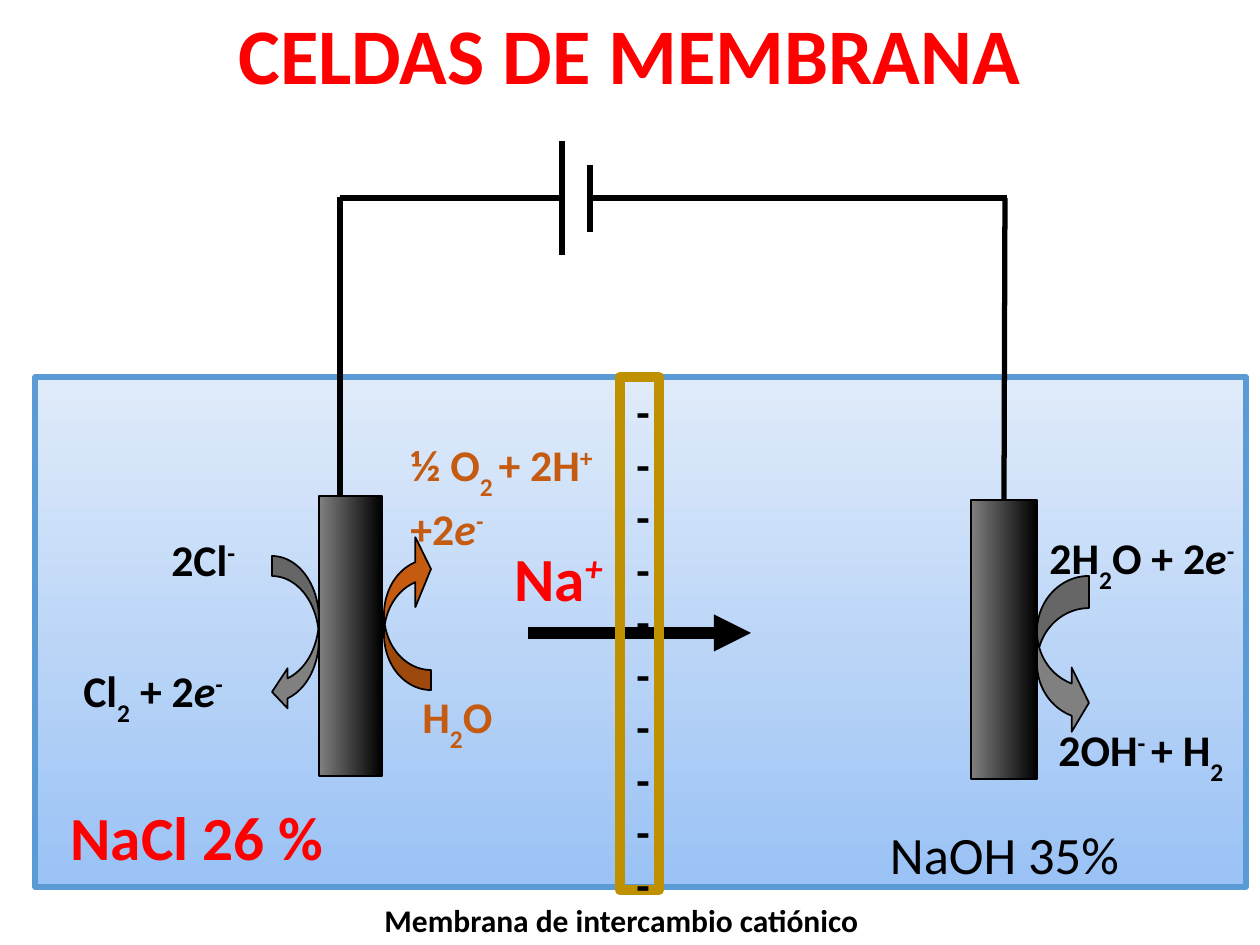
from lxml import etree
from pptx import Presentation
from pptx import util as u
from pptx.dml.color import RGBColor
from pptx.enum import shapes as sh, text as tx
from pptx.oxml.ns import qn

PX = 914400 / 126
HUES = {
    "black": "000000", "red": "FF0000", "rust": "C55A11", "gray": "808080",
    "blue": "5B9BD5", "pale": "E0EBFA", "sky": "9AC2F5", "gold": "BF9000",
}
RGB = {name: RGBColor.from_string(code) for name, code in HUES.items()}
KIND = sh.MSO_SHAPE

deck = Presentation()
deck.slide_width, deck.slide_height = u.Emu(9144000), u.Emu(6858000)
slide = deck.slides.add_slide(deck.slide_layouts[6])


def px(*vals):
    """Turn pixel lengths into EMU."""
    return [u.Emu(round(v * PX)) for v in vals]


def draw(kind, box, fill, edge, width):
    """Add a shape; fill is None, a colour, or (from, to, angle)."""
    form = slide.shapes.add_shape(kind, *px(*box))
    form.shadow.inherit = False
    form.line.color.rgb = RGB[edge]
    form.line.width = u.Pt(width)
    if fill is None:
        form.fill.background()
    elif isinstance(fill, str):
        form.fill.solid()
        form.fill.fore_color.rgb = RGB[fill]
    else:
        form.fill.gradient()
        form.fill.gradient_angle = fill[2]
        for stop, hue in zip(form.fill.gradient_stops, fill):
            stop.color.rgb = RGB[hue]
    return form


# Tank and electrodes
draw(KIND.RECTANGLE, (35, 377, 1211, 510), ("pale", "sky", 270), "blue", 3)
metal = ("gray", "black", 0)
anode = draw(KIND.RECTANGLE, (319, 496, 63, 280), metal, "black", 1)
cathode = draw(KIND.RECTANGLE, (971, 500, 66, 279), metal, "black", 1)

# Wires, battery plates and ion arrow: ends, width, joined shape, arrowhead
LINES = [
    ((340, 496, 340, 197), 3, None, False),
    ((1004, 500, 1005, 198), 3, cathode, False),
    ((340, 198, 561, 198), 3, None, False),
    ((590, 198, 1007, 198), 3, None, False),
    ((562, 255, 562, 141), 3, None, False),
    ((590, 232, 590, 165), 3, None, False),
    ((528, 633, 751, 633), 7.09, None, True),
]
for ends, width, joint, head in LINES:
    wire = slide.shapes.add_connector(sh.MSO_CONNECTOR.STRAIGHT, *px(*ends))
    wire.line.color.rgb = RGB["black"]
    wire.line.width = u.Pt(width)
    if joint is not None:
        wire.begin_connect(joint, 0)
    props = wire._element.spPr
    if head:
        etree.SubElement(props.find(qn("a:ln")), qn("a:tailEnd"), type="triangle")
    etree.SubElement(props, qn("a:effectLst"))

# Curved reaction arrows
CURVES = [
    (KIND.CURVED_RIGHT_ARROW, (1037, 576, 52, 159), "gray", (0.618, 1.236, 0.333), 0),
    (KIND.CURVED_LEFT_ARROW, (272, 556, 47, 156), "gray", (0.427, 0.854, 0.333), 0),
    (KIND.CURVED_LEFT_ARROW, (384, 534, 47, 156), "rust", (0.427, 1.488, 0.333), 180),
]
for kind, box, fill, bends, turn in CURVES:
    curve = draw(kind, box, fill, "black", 1)
    curve.rotation = turn
    for i, bend in enumerate(bends):
        curve.adjustments[i] = bend

draw(KIND.RECTANGLE, (620, 377, 39, 513), None, "gold", 6)

# Labels: box, size, colour, bold, wrap, centred, runs of (text, style)
# Styles: _ subscript, ^ superscript, i italic, / new line first
LABELS = [
    ((69, 0, 1121, 108), 45, "red", True, True, True, [("CELDAS DE MEMBRANA", "")]),
    ((1037, 525, 247, 62), 25, "black", True, True, False,
     [("2H", ""), ("2", "_"), ("O + 2", ""), ("e", "i"), ("-", "i^")]),
    ((1046, 717, 210, 62), 25, "black", True, True, False,
     [("2OH", ""), ("- ", "^"), ("+ H", ""), ("2", "_")]),
    ((159, 527, 141, 66), 25, "black", True, True, False, [("2Cl", ""), ("-", "^")]),
    ((71, 658, 282, 66), 25, "black", True, True, False,
     [("Cl", ""), ("2", "_"), (" + 2", ""), ("e", "i"), ("-", "i^")]),
    ((876, 816, 257, 77), 30, "black", False, False, True, [("NaOH 35%", "")]),
    ((52, 793, 290, 87), 35, "red", True, False, True, [("NaCl 26 % ", "")]),
    ((624, 379, 32, 505), 25, "black", True, True, False, [("-" * 10, "")]),
    ((494, 534, 129, 82), 35, "red", True, False, True, [("Na", ""), ("+", "i^")]),
    ((370, 895, 503, 50), 18, "black", True, False, True,
     [("Membrana de intercambio catiónico", "")]),
    ((410, 684, 141, 66), 25, "rust", True, True, False,
     [("H", ""), ("2", "_"), ("O", "")]),
    ((398, 432, 282, 118), 25, "rust", True, True, False,
     [("½ O", ""), ("2 ", "_"), ("+ 2H", ""), ("+", "^"),
      ("+2", "/"), ("e", "i"), ("-", "i^")]),
]
for box, size, hue, bold, wrap, mid, runs in LABELS:
    frame = slide.shapes.add_textbox(*px(*box)).text_frame
    frame.word_wrap = wrap
    para = frame.paragraphs[0]
    para.alignment = tx.PP_ALIGN.CENTER if mid else tx.PP_ALIGN.LEFT
    for words, style in runs:
        if "/" in style:
            para.add_line_break()
        run = para.add_run()
        run.text = words
        look = {"name": "Calibri", "size": u.Pt(size), "bold": bold, "italic": "i" in style}
        for key, val in look.items():
            setattr(run.font, key, val)
        run.font.color.rgb = RGB[hue]
        for mark, shift in (("_", "-33000"), ("^", "33000")):
            if mark in style:
                run._r.get_or_add_rPr().set("baseline", shift)

deck.save("out.pptx")
